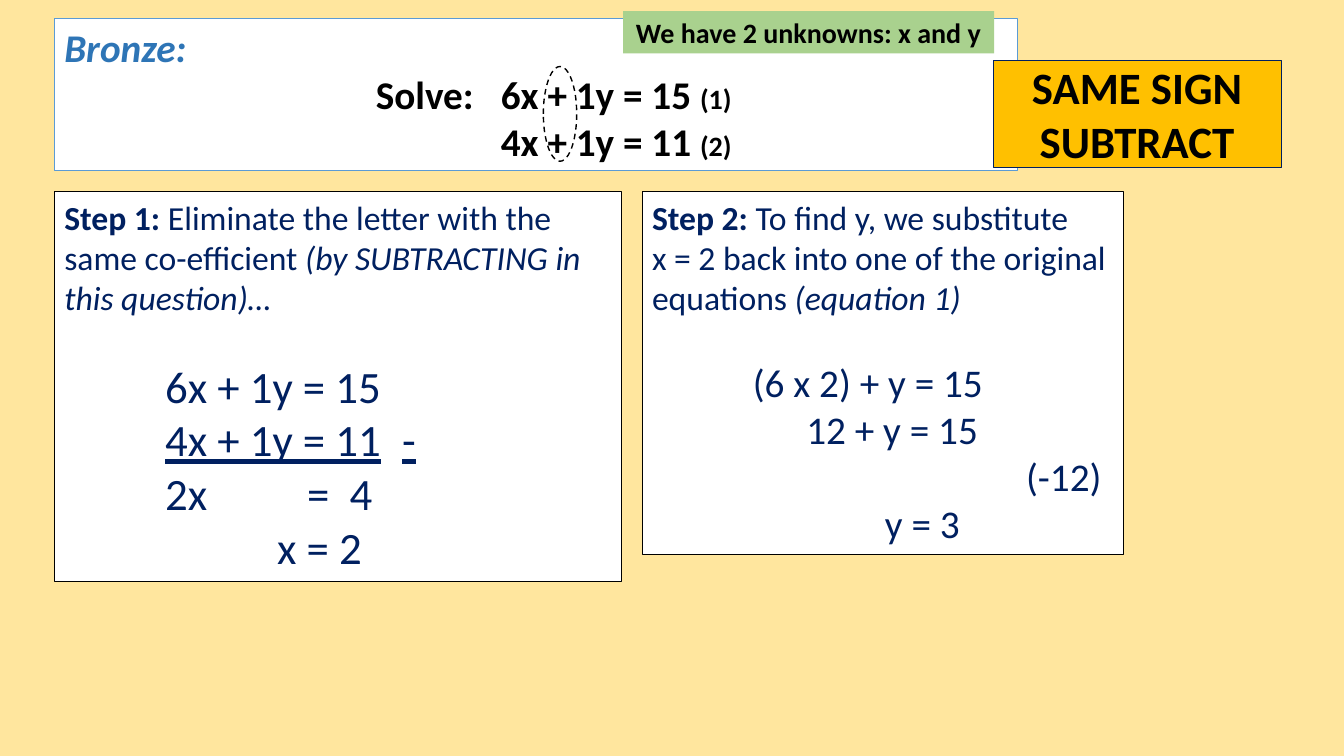
import pptx
import pptx.dml.color
import pptx.enum.dml
import pptx.enum.shapes
import pptx.enum.text
import pptx.util
from lxml import etree

WIDTH, HEIGHT = pptx.util.Inches(13.33), pptx.util.Inches(7.5)
NAVY, BLACK, WHITE, AMBER = "002060", "000000", "FFFFFF", "FFC000"
LEFT_EDGE, STEP_TOP = 4.05, 25.33
BLANK_LINE = 29.3
CENTER = pptx.enum.text.PP_ALIGN.CENTER
OVAL = pptx.enum.shapes.MSO_SHAPE.OVAL
RECTANGLE = pptx.enum.shapes.MSO_SHAPE.RECTANGLE


def color(hex_code):
    return pptx.dml.color.RGBColor.from_string(hex_code)


def across(percent):
    return round(WIDTH * percent / 100)


def down(percent):
    return round(HEIGHT * percent / 100)


def add_panel(slide, left, top, width, height, fill=None, line=None,
              line_width=0.75, kind=RECTANGLE):
    """Place a shape, with its box in percent of the slide."""
    panel = slide.shapes.add_shape(
        kind, across(left), down(top), across(width), down(height))
    panel.shadow.inherit = False
    if fill:
        panel.fill.solid()
        panel.fill.fore_color.rgb = color(fill)
    else:
        panel.fill.background()
    if line:
        panel.line.color.rgb = color(line)
        panel.line.width = pptx.util.Pt(line_width)
    else:
        panel.line.fill.background()
    panel.text_frame.word_wrap = True
    panel.text_frame.vertical_anchor = pptx.enum.text.MSO_ANCHOR.TOP
    return panel


def set_tabs(paragraph, stops):
    """Add left tab stops, in percent of the slide's width."""
    properties = paragraph._p.get_or_add_pPr()
    tab_list = etree.SubElement(properties, pptx.oxml.ns.qn("a:tabLst"))
    for stop in stops:
        etree.SubElement(tab_list, pptx.oxml.ns.qn("a:tab"),
                         pos=str(across(stop)), algn="l")


def write(panel, lines):
    """Write lines of (runs, size, color, options); a run is (text, styles)."""
    frame = panel.text_frame
    for number, (runs, size, ink, options) in enumerate(lines):
        paragraph = frame.add_paragraph() if number else frame.paragraphs[0]
        paragraph.alignment = options.get("align", pptx.enum.text.PP_ALIGN.LEFT)
        if "tabs" in options:
            set_tabs(paragraph, options["tabs"])
        if "before" in options:
            paragraph.space_before = pptx.util.Pt(options["before"])
        paragraph.font.name = "Calibri"
        paragraph.font.size = pptx.util.Pt(size)
        paragraph.font.color.rgb = color(ink)
        paragraph.font.bold = options.get("bold", False)
        for text, styles in runs:
            run = paragraph.add_run()
            run.text = text
            for style, value in styles.items():
                setattr(run.font, style, value)


def add_label(slide, text, size, *box, **look):
    label = add_panel(slide, *box, **look)
    label.text_frame.vertical_anchor = pptx.enum.text.MSO_ANCHOR.MIDDLE
    write(label, [([(text, {})], size, BLACK, {"align": CENTER, "bold": True})])


def working(text, *tabs, **options):
    """Give one line of working, its parts set at tab stops."""
    size = options.pop("size")
    return [(text, {})], size, NAVY, {"tabs": tabs, **options}


def add_question(slide):
    question = add_panel(slide, LEFT_EDGE, 2.4, 71.7, 20.13, WHITE, "5B9BD5")
    small = {"size": pptx.util.Pt(20)}
    equations = {"tabs": (23.18, 32.48), "bold": True}
    write(question, [
        ([("Bronze:", {"italic": True})], 28, "2E75B6", {"bold": True}),
        ([("\tSolve:\t6x + 1y = 15 ", {}), ("(1)", small)], 28, BLACK, equations),
        ([("\t\t4x + 1y = 11 ", {}), ("(2)", small)], 28, BLACK, equations),
    ])


def add_elimination(slide):
    step = add_panel(slide, LEFT_EDGE, STEP_TOP, 42.22, 51.6, WHITE, BLACK)
    write(step, [
        ([("Step 1: ", {"bold": True}),
          ("Eliminate the letter with the same co-efficient ", {}),
          ("(by SUBTRACTING in this question)…", {"italic": True})],
         24, NAVY, {}),
        working("\t6x + 1y = 15", 7.5, size=32, before=BLANK_LINE),
        ([("\t", {}), ("4x + 1y = 11\t-", {"underline": True})],
         32, NAVY, {"tabs": (7.5, 25.13)}),
        working("\t2x\t=\t4", 7.5, 18.07, 21.23, size=32),
        working("\tx = 2", 15.83, size=32),
    ])


def add_substitution(slide):
    step = add_panel(slide, 47.78, STEP_TOP, 35.85, 48, WHITE, BLACK)
    write(step, [
        ([("Step 2: ", {"bold": True}), ("To find y, we substitute", {})],
         24, NAVY, {}),
        ([("x = 2 back into one of the original equations ", {}),
          ("(equation 1)", {"italic": True})], 24, NAVY, {}),
        working("\t(6 x 2) + y = 15", 7.5, size=28, before=BLANK_LINE),
        working("\t12 + y = 15", 11.48, size=28),
        working("\t(-12)", 27.83, size=28),
        working("\ty = 3", 17.33, size=28),
    ])


def main():
    deck = pptx.Presentation()
    deck.slide_width, deck.slide_height = WIDTH, HEIGHT
    slide = deck.slides.add_slide(deck.slide_layouts[6])
    slide.background.fill.solid()
    slide.background.fill.fore_color.rgb = color("FFE69E")

    add_question(slide)
    add_label(slide, "SAME SIGN SUBTRACT", 32, 73.89, 8, 21.44, 14.13,
              fill=AMBER, line=NAVY)
    add_elimination(slide)
    add_label(slide, "We have 2 unknowns: x and y", 20, 46.36, 1.47, 27.6, 5.6,
              fill="A9D18E")
    add_substitution(slide)
    plus_signs = add_panel(slide, 40.43, 8.8, 2.48, 12.53, line=BLACK,
                           line_width=1, kind=OVAL)
    plus_signs.line.dash_style = pptx.enum.dml.MSO_LINE.DASH
    deck.save("out.pptx")


if __name__ == "__main__":
    main()
